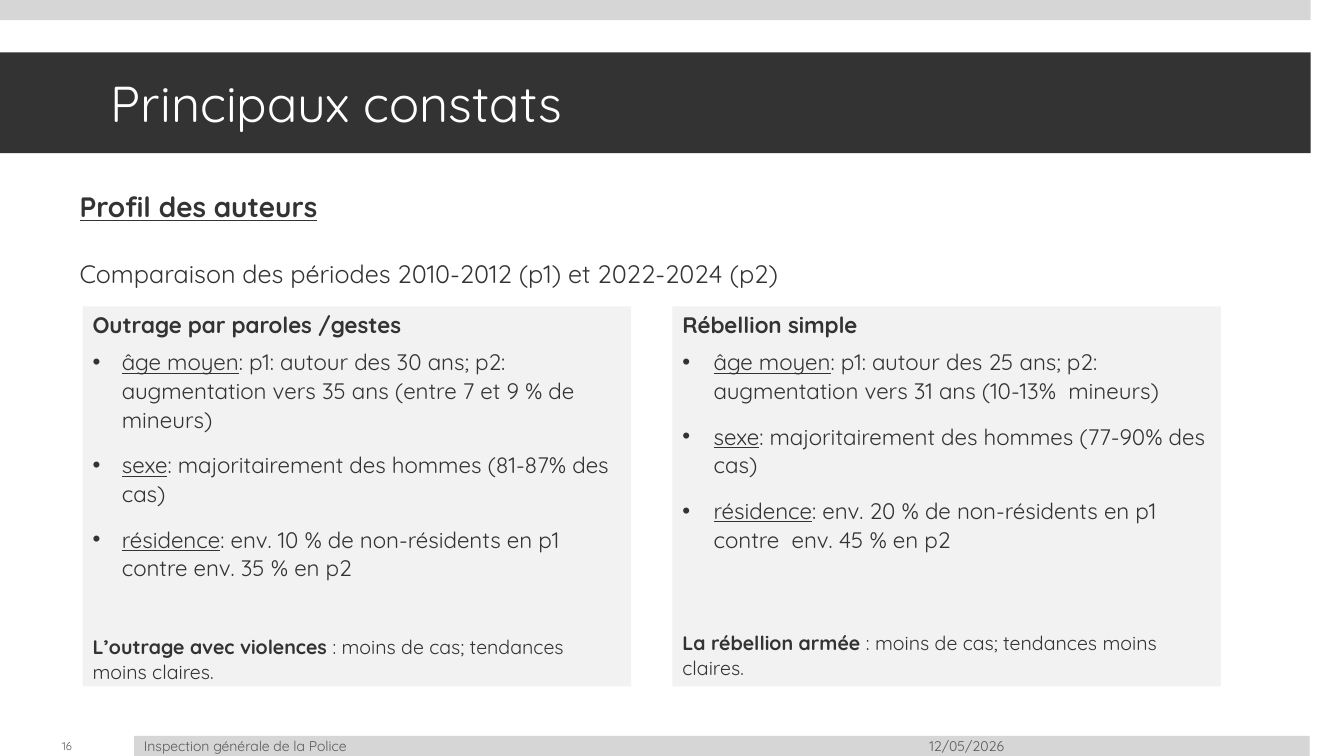
from dataclasses import dataclass

from lxml.etree import SubElement
from pptx import Presentation
from pptx.dml.color import RGBColor
from pptx.enum.shapes import MSO_SHAPE as Shape
from pptx.enum.text import MSO_ANCHOR as Anchor, MSO_AUTO_SIZE as Fit, PP_ALIGN as Align
from pptx.oxml.ns import qn
from pptx.util import Inches, Pt

FACE = "Quicksand"
DARK, GREY, BAND, PALE, WHITE = "333333", "595959", "D6D6D6", "F2F2F2", "FFFFFF"


@dataclass
class Point:
    label: str
    text: str


@dataclass
class Card:
    left: float
    indent: float
    gap: float
    head: str
    points: list[Point]
    close: Point


CARDS = [
    Card(0.82, 0.29, 25, "Outrage par paroles /gestes", [
        Point("âge moyen", ": p1: autour des 30 ans; p2:  augmentation vers 35 ans (entre 7 et 9 % de mineurs)"),
        Point("sexe", ": majoritairement des hommes (81-87% des cas)"),
        Point("résidence", ": env. 10 % de non-résidents en p1 contre env. 35 % en p2"),
    ], Point("L’outrage avec violences", " : moins de cas; tendances moins claires.")),
    Card(6.67, 0.31, 43, "Rébellion simple", [
        Point("âge moyen", ": p1: autour des 25 ans; p2:  augmentation vers 31 ans (10-13%  mineurs)"),
        Point("sexe", ": majoritairement des hommes (77-90% des cas)"),
        Point("résidence", ": env. 20 % de non-résidents en p1 contre  env. 45 % en p2"),
    ], Point("La rébellion armée", " : moins de cas; tendances moins claires.")),
]


def tint(color, code: str) -> None:
    color.rgb = RGBColor.from_string(code)


def paint(shape, code: str) -> None:
    shape.fill.solid()
    tint(shape.fill.fore_color, code)
    shape.line.fill.background()


def style(para, size: float, code: str = DARK, bold: bool | None = None) -> None:
    para.font.name = FACE
    para.font.size = Pt(size)
    para.font.bold = bold
    tint(para.font.color, code)


def add_bar(slide, left: float, top: float, width: float, height: float, code: str):
    bar = slide.shapes.add_shape(
        Shape.RECTANGLE, Inches(left), Inches(top), Inches(width), Inches(height))
    bar.shadow.inherit = False
    paint(bar, code)
    return bar


def add_text(slide, left: float, top: float, width: float, height: float):
    box = slide.shapes.add_textbox(Inches(left), Inches(top), Inches(width), Inches(height))
    box.text_frame.word_wrap = True
    return box.text_frame


def add_para(frame, before: float, after: float):
    para = frame.add_paragraph()
    para.alignment = Align.LEFT
    para.line_spacing = 1.07
    para.space_before = Pt(before)
    para.space_after = Pt(after)
    return para


def add_pair(para, point: Point):
    lead = para.add_run()
    lead.text = point.label
    para.add_run().text = point.text
    return lead


def add_dot(para, indent: float) -> None:
    props = para._p.get_or_add_pPr()
    props.set("marL", str(Inches(indent)))
    props.set("indent", str(-Inches(indent)))
    color = SubElement(props, qn("a:buClr"))
    SubElement(color, qn("a:srgbClr"), val=DARK)
    SubElement(props, qn("a:buFont"), typeface="Arial")
    SubElement(props, qn("a:buChar"), char="•")


def add_card(slide, card: Card) -> None:
    frame = add_bar(slide, card.left, 3.04, 5.44, 3.77, PALE).text_frame
    frame.word_wrap = True
    frame.vertical_anchor = Anchor.TOP
    head = frame.paragraphs[0]
    head.text = card.head
    head.alignment = Align.LEFT
    head.space_after = Pt(6)
    style(head, 16, bold=True)
    for point in card.points:
        para = add_para(frame, 0, 12)
        add_dot(para, card.indent)
        add_pair(para, point).font.underline = True
        style(para, 16)
    close = add_para(frame, card.gap, 6)
    add_pair(close, card.close).font.bold = True
    style(close, 14)


def add_title(slide) -> None:
    title = slide.shapes.title
    title.left, title.top = Inches(0), Inches(0.52)
    title.width, title.height = Inches(13), Inches(1)
    paint(title, DARK)
    frame = title.text_frame
    frame.text = "Principaux constats"
    frame.auto_size = Fit.NONE
    frame.vertical_anchor = Anchor.MIDDLE
    frame.margin_left, frame.margin_right = Inches(1.1), Inches(0.2)
    frame.margin_top = frame.margin_bottom = 0
    para = frame.paragraphs[0]
    para.alignment = Align.LEFT
    style(para, 36, WHITE)


def add_foot(slide) -> None:
    page = add_text(slide, 0, 7.3, 1.33, 0.2)
    page.vertical_anchor = Anchor.MIDDLE
    page.text = "16"
    page.paragraphs[0].alignment = Align.CENTER
    style(page.paragraphs[0], 8, GREY)
    foot = add_bar(slide, 1.33, 7.3, 11.66, 0.2, BAND).text_frame
    foot.word_wrap = True
    foot.vertical_anchor = Anchor.MIDDLE
    para = foot.paragraphs[0]
    para.text = "Inspection générale de la Police\t12/05/2026"
    para.alignment = Align.LEFT
    tabs = SubElement(para._p.get_or_add_pPr(), qn("a:tabLst"))
    SubElement(tabs, qn("a:tab"), pos=str(Inches(8.53)), algn="r")
    style(para, 10, GREY)


def add_intro(slide) -> None:
    frame = add_text(slide, 0.69, 1.83, 9.51, 1.08)
    head = frame.paragraphs[0]
    head.text = "Profil des auteurs"
    style(head, 20, bold=True)
    head.font.underline = True
    para = frame.add_paragraph()
    para.text = "Comparaison des périodes 2010-2012 (p1) et 2022-2024 (p2)"
    para.space_before = Pt(25)
    style(para, 18)


def main() -> None:
    deck = Presentation()
    deck.slide_width, deck.slide_height = Inches(13.33), Inches(7.5)
    slide = deck.slides.add_slide(deck.slide_layouts[5])
    add_bar(slide, 0, 0, 13, 0.2, BAND)
    add_title(slide)
    add_foot(slide)
    for card in CARDS:
        add_card(slide, card)
    add_intro(slide)
    deck.save("out.pptx")


if __name__ == "__main__":
    main()
